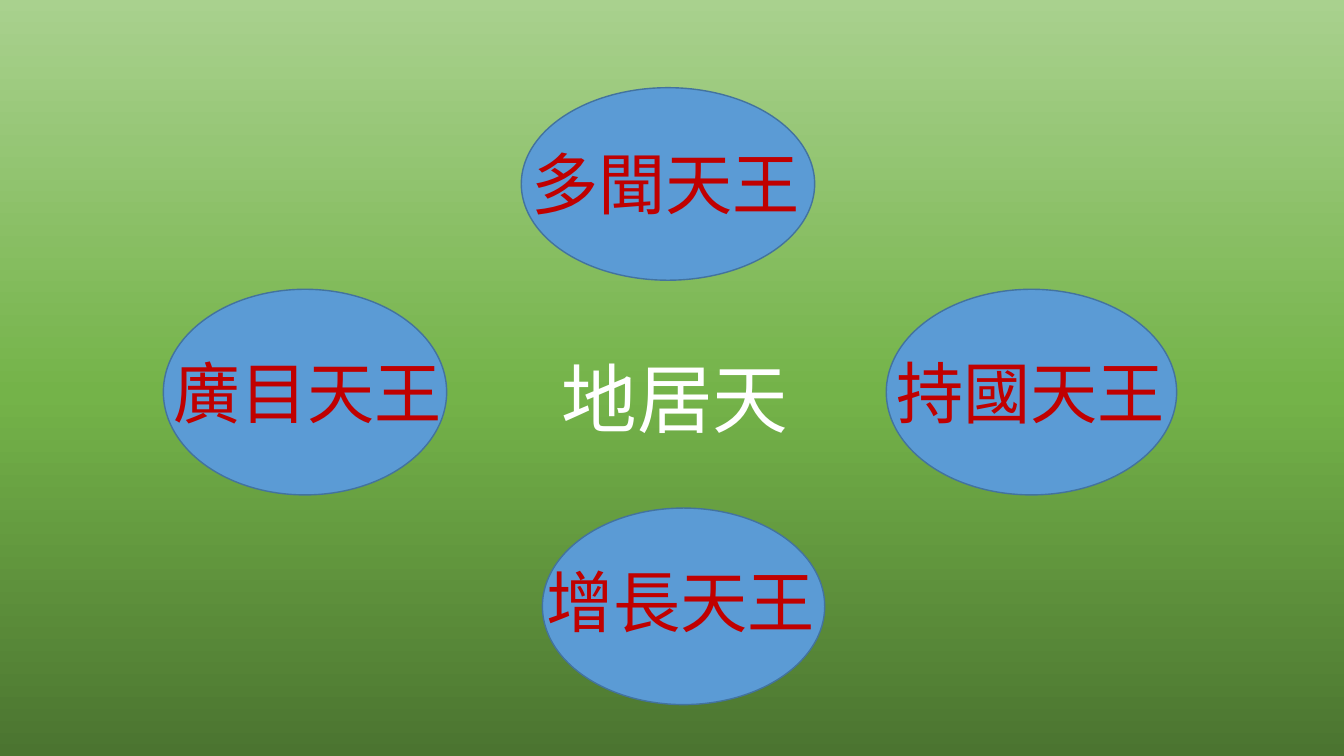
import copy

import pptx
import pptx.dml.color
import pptx.enum.shapes
import pptx.enum.text
import pptx.util

COLORS = {
    "ground": "4B7430",
    "grass": "74B349",
    "sky": "A9D18E",
    "disc": "5B9BD5",
    "rim": "43739E",
    "king": "C00000",
    "heaven": "FFFFFF",
}


def rgb(name):
    return pptx.dml.color.RGBColor.from_string(COLORS[name])


deck = pptx.Presentation()
deck.slide_width = pptx.util.Inches(13.33)
deck.slide_height = pptx.util.Inches(7.5)
slide = deck.slides.add_slide(deck.slide_layouts[6])

backdrop = slide.background.fill
backdrop.gradient()
backdrop.gradient_angle = 90
stop_list = slide.element.xpath(".//a:gsLst")[0]
stop_list.insert(1, copy.deepcopy(stop_list[0]))
for stop, (position, color) in zip(
    backdrop.gradient_stops, [(0, "ground"), (0.48, "grass"), (1, "sky")]
):
    stop.position = position
    stop.color.rgb = rgb(color)

west, center, east = 1.62, 5.17, 8.79
middle, label_row = 2.87, 3.44

discs = [
    (center, 0.87, 2.91, 1.91),
    (5.38, 5.04, 2.8, 1.95),
    (west, middle, 2.81, 2.04),
    (east, middle, 2.88, 2.04),
]
for box in discs:
    disc = slide.shapes.add_shape(
        pptx.enum.shapes.MSO_SHAPE.FLOWCHART_CONNECTOR, *map(pptx.util.Inches, box)
    )
    disc.shadow.inherit = False
    disc.fill.solid()
    disc.fill.fore_color.rgb = rgb("disc")
    disc.line.color.rgb = rgb("rim")
    disc.line.width = pptx.util.Pt(1)

labels = [
    (" 增長天王", (center, 5.51, 3.22, 1.51), 48, "king"),
    ("持國天王", (east, label_row, 2.88, 0.91), 48, "king"),
    ("廣目天王", (west, label_row, 2.9, 0.91), 48, "king"),
    ("多聞天王", (center, 1.36, 3.01, 1.21), 48, "king"),
    ("地居天", (5.47, label_row, 2.71, 1.01), 54, "heaven"),
]
for wording, box, size, color in labels:
    frame = slide.shapes.add_textbox(*map(pptx.util.Inches, box)).text_frame
    frame.word_wrap = True
    frame.auto_size = pptx.enum.text.MSO_AUTO_SIZE.SHAPE_TO_FIT_TEXT
    frame.text = wording
    font = frame.paragraphs[0].runs[0].font
    font.name = "Calibri"
    font.size = pptx.util.Pt(size)
    font.color.rgb = rgb(color)

deck.save("out.pptx")
